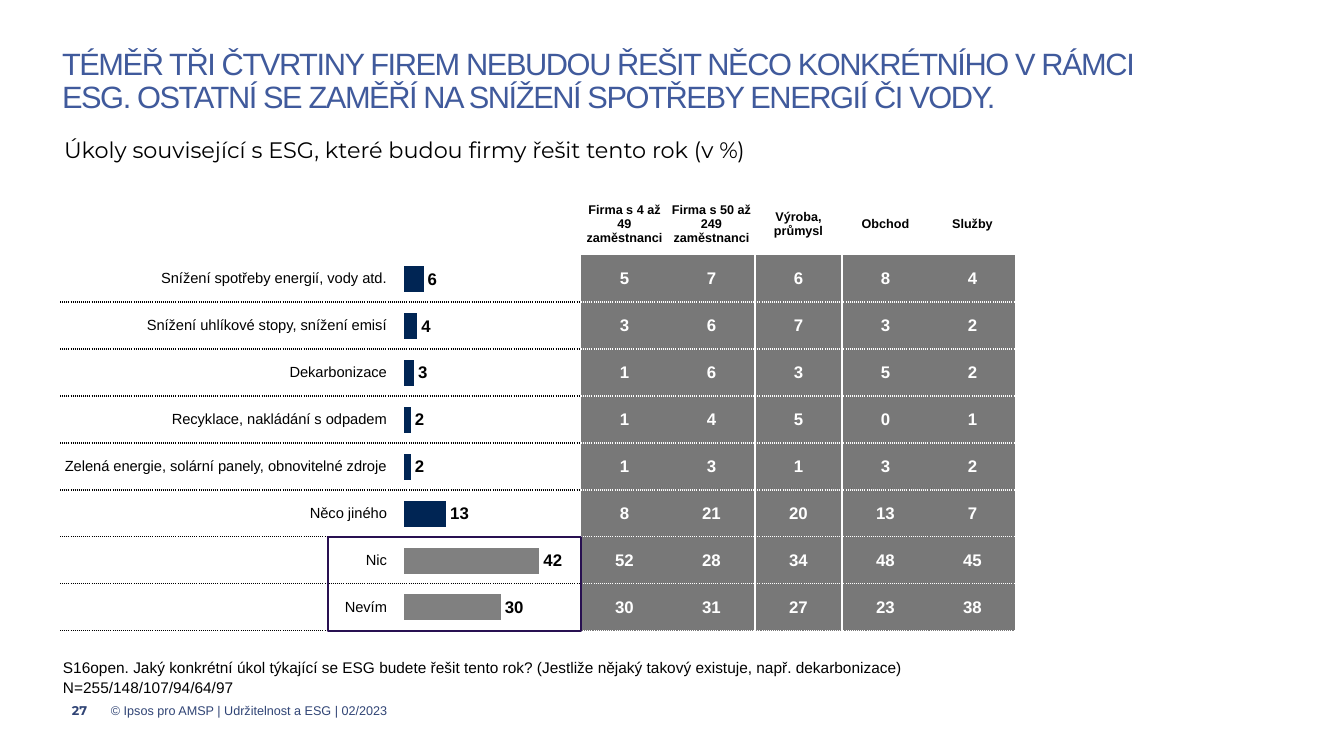
import pptx
import pptx.chart.data
import pptx.dml.color
import pptx.enum.chart
import pptx.enum.shapes
import pptx.enum.text
import pptx.oxml
import pptx.oxml.ns
import pptx.util

# Content
TITLE = ("TÉMĚŘ TŘI ČTVRTINY FIREM NEBUDOU ŘEŠIT NĚCO KONKRÉTNÍHO V RÁMCI ESG. "
         "OSTATNÍ SE ZAMĚŘÍ NA SNÍŽENÍ SPOTŘEBY ENERGIÍ ČI VODY.")
SUBTITLE = "Úkoly související s ESG, které budou firmy řešit tento rok (v %)"
QUESTION = [
    "S16open. Jaký konkrétní úkol týkající se ESG budete řešit tento rok? "
    "(Jestliže nějaký takový existuje, např. dekarbonizace)",
    "N=255/148/107/94/64/97",
]
PAGE_NUMBER = "27"
COPYRIGHT = "© Ipsos pro AMSP | Udržitelnost a ESG | 02/2023"
SEGMENTS = ["Firma s 4 až 49 zaměstnanci", "Firma s 50 až 249 zaměstnanci",
            "Výroba, průmysl", "Obchod", "Služby"]
# Task, total share, share in each segment
TASKS = [
    ("Snížení spotřeby energií, vody atd.", 6, (5, 7, 6, 8, 4)),
    ("Snížení uhlíkové stopy, snížení emisí", 4, (3, 6, 7, 3, 2)),
    ("Dekarbonizace", 3, (1, 6, 3, 5, 2)),
    ("Recyklace, nakládání s odpadem", 2, (1, 4, 5, 0, 1)),
    ("Zelená energie, solární panely, obnovitelné zdroje", 2, (1, 3, 1, 3, 2)),
    ("Něco jiného", 13, (8, 21, 20, 13, 7)),
    ("Nic", 42, (52, 28, 34, 48, 45)),
    ("Nevím", 30, (30, 31, 27, 23, 38)),
]
NO_TASK_ROWS = (6, 7)

RGBColor = pptx.dml.color.RGBColor
BLACK = RGBColor(0x00, 0x00, 0x00)
WHITE = RGBColor(0xFF, 0xFF, 0xFF)
TITLE_BLUE = RGBColor(0x40, 0x5A, 0x9C)
FOOTER_BLUE = RGBColor(0x30, 0x44, 0x75)
BAR_NAVY = RGBColor(0x00, 0x25, 0x54)
BAR_GREY = RGBColor(0x80, 0x80, 0x80)
CELL_GREY = RGBColor(0x78, 0x78, 0x78)
FRAME_PURPLE = RGBColor(0x28, 0x10, 0x51)

PP_ALIGN = pptx.enum.text.PP_ALIGN
ANCHOR = pptx.enum.text.MSO_ANCHOR
Pt = pptx.util.Pt
EMU_PER_PX = 914400 / 100.8
NO_GRID_STYLE = "{2D5ABB26-0587-4C30-8999-92F81FD0307C}"


def px(*lengths):
    return [pptx.util.Emu(round(length * EMU_PER_PX)) for length in lengths]


def set_insets(holder, horizontal, vertical):
    holder.margin_left, holder.margin_right = px(horizontal, horizontal)
    holder.margin_top, holder.margin_bottom = px(vertical, vertical)


def format_text(frame, size, color, name="Arial", bold=False, align=PP_ALIGN.LEFT, spacing=None):
    for paragraph in frame.paragraphs:
        paragraph.alignment = align
        paragraph.line_spacing = spacing
        for run in paragraph.runs:
            run.font.size = Pt(size)
            run.font.name = name
            run.font.bold = bold
            run.font.color.rgb = color


def add_text(text, box, insets, anchor, **style):
    frame = slide.shapes.add_textbox(*px(*box)).text_frame
    frame.word_wrap = True
    frame.vertical_anchor = anchor
    set_insets(frame, *insets)
    frame.paragraphs[0].text = text
    format_text(frame, **style)


def add_border(cell, side, color, points, dash):
    properties = cell._tc.get_or_add_tcPr()
    properties.append(pptx.oxml.parse_xml(
        f'<a:ln{side} {pptx.oxml.ns.nsdecls("a")} w="{Pt(points)}">'
        f'<a:solidFill><a:srgbClr val="{color}"/></a:solidFill>'
        f'<a:prstDash val="{dash}"/></a:ln{side}>'))


def fill_cell(row, column, text, fill, **style):
    cell = table.cell(row, column)
    in_segments = column >= 2
    dots = WHITE if in_segments else BLACK
    # Solid white dividers, dotted lines between the task rows
    if column == 4:
        add_border(cell, "L", WHITE, 2.25, "solid")
    if column in (3, 6):
        add_border(cell, "R", WHITE, 2.25 if column == 3 else 1.5, "solid")
    if row > 1:
        add_border(cell, "T", dots, 1, "sysDot")
    if row > 0:
        add_border(cell, "B", dots, 1, "sysDot")
    if fill is None:
        cell.fill.background()
    else:
        cell.fill.solid()
        cell.fill.fore_color.rgb = fill
    set_insets(cell, 1, 0)
    cell.vertical_anchor = ANCHOR.MIDDLE
    cell.text_frame.text = text
    format_text(cell.text_frame, **style)


presentation = pptx.Presentation()
presentation.slide_width, presentation.slide_height = px(1344, 756)
slide = presentation.slides.add_slide(presentation.slide_layouts[5])

# Title
title = slide.shapes.title
title.left, title.top, title.width, title.height = px(44, 44, 1145, 78)
title_frame = title.text_frame
title_frame.text = TITLE
title_frame.word_wrap = True
title_frame.auto_size = pptx.enum.text.MSO_AUTO_SIZE.NONE
title_frame.vertical_anchor = ANCHOR.TOP
set_insets(title_frame, 18, 5)
format_text(title_frame, 22, TITLE_BLUE, spacing=0.9)
title_frame.paragraphs[0].runs[0].font._element.set("spc", "-100")

# Table of segments
TABLE_LEFT, TABLE_TOP, HEADER_HEIGHT, ROW_HEIGHT = 60, 194, 61, 47
COLUMN_WIDTHS = [328, 193] + [87] * len(SEGMENTS)
table_height = HEADER_HEIGHT + ROW_HEIGHT * len(TASKS)
table_frame = slide.shapes.add_table(
    len(TASKS) + 1, len(COLUMN_WIDTHS),
    *px(TABLE_LEFT, TABLE_TOP, sum(COLUMN_WIDTHS), table_height))
table = table_frame.table
table.first_row = table.horz_banding = False
for style_id in table_frame._element.iter(pptx.oxml.ns.qn("a:tableStyleId")):
    style_id.text = NO_GRID_STYLE
for column, width in zip(table.columns, px(*COLUMN_WIDTHS)):
    column.width = width
for row, height in zip(table.rows, px(HEADER_HEIGHT, *[ROW_HEIGHT] * len(TASKS))):
    row.height = height

for column, heading in enumerate(["", ""] + SEGMENTS):
    fill_cell(0, column, heading, None, size=9, color=BLACK, bold=True, align=PP_ALIGN.CENTER)
for row, (task, total, shares) in enumerate(TASKS, 1):
    fill_cell(row, 0, task, None, size=10.5, color=BLACK, align=PP_ALIGN.RIGHT)
    fill_cell(row, 1, "", None, size=10.5, color=BLACK)
    for column, share in enumerate(shares, 2):
        fill_cell(row, column, str(share), CELL_GREY, size=12, color=WHITE, bold=True,
                  align=PP_ALIGN.CENTER)

# Bar chart of totals
chart_data = pptx.chart.data.CategoryChartData(number_format="0")
chart_data.categories = [str(number) for number in range(1, len(TASKS) + 1)]
chart_data.add_series("Series 1", [total for task, total, shares in TASKS])
chart = slide.shapes.add_chart(
    pptx.enum.chart.XL_CHART_TYPE.BAR_CLUSTERED, *px(364, 204, 346, 427), chart_data).chart
chart.has_legend = chart.has_title = False
chart.font.size = Pt(11)
chart.font.name = "Arial"
chart.font.color.rgb = BLACK
chart.category_axis.reverse_order = True
chart.category_axis.visible = False
value_axis = chart.value_axis
value_axis.minimum_scale, value_axis.maximum_scale, value_axis.major_unit = 0, 95, 20
value_axis.has_major_gridlines = False
value_axis.visible = False

plot = chart.plots[0]
plot.gap_width = 80
plot.vary_by_categories = False
plot.has_data_labels = True
labels = plot.data_labels
labels.show_value = True
labels.number_format, labels.number_format_is_linked = "0", False
labels.position = pptx.enum.chart.XL_LABEL_POSITION.OUTSIDE_END
labels.font.size = Pt(12)
labels.font.bold = True
series = plot.series[0]
series.format.fill.solid()
series.format.fill.fore_color.rgb = BAR_NAVY
for index in NO_TASK_ROWS:
    point_fill = series.points[index].format.fill
    point_fill.solid()
    point_fill.fore_color.rgb = BAR_GREY

plot_area = chart._chartSpace.chart.plotArea
for layout in plot_area.findall(pptx.oxml.ns.qn("c:layout")):
    plot_area.remove(layout)
plot_area.insert(0, pptx.oxml.parse_xml(
    f'<c:layout {pptx.oxml.ns.nsdecls("c")}><c:manualLayout><c:layoutTarget val="inner"/>'
    '<c:xMode val="edge"/><c:yMode val="edge"/><c:x val="0.117"/><c:y val="0.122"/>'
    '<c:w val="0.883"/><c:h val="0.878"/></c:manualLayout></c:layout>'))

# Subtitle, question and footer
add_text(SUBTITLE, (64, 143, 912, 21), (0, 0), ANCHOR.TOP,
         size=16, color=BLACK, name="Montserrat", spacing=Pt(14))
add_text("\v".join(QUESTION), (53, 652, 1145, 48), (10, 5), ANCHOR.TOP,
         size=11, color=BLACK, spacing=Pt(14))
add_text(PAGE_NUMBER, (60, 691, 39, 40), (0, 5), ANCHOR.MIDDLE,
         size=9, color=FOOTER_BLUE, name="Montserrat", bold=True, align=PP_ALIGN.CENTER)
add_text(COPYRIGHT, (111, 691, 1015, 40), (0, 5), ANCHOR.MIDDLE, size=9, color=FOOTER_BLUE)

# Frame around the answers without a task
frame_top = TABLE_TOP + HEADER_HEIGHT + ROW_HEIGHT * NO_TASK_ROWS[0]
frame = slide.shapes.add_shape(
    pptx.enum.shapes.MSO_SHAPE.RECTANGLE,
    *px(328, frame_top, 253, ROW_HEIGHT * len(NO_TASK_ROWS)))
frame.shadow.inherit = False
frame.fill.background()
frame.line.color.rgb = FRAME_PURPLE
frame.line.width = Pt(1)

presentation.save("out.pptx")
